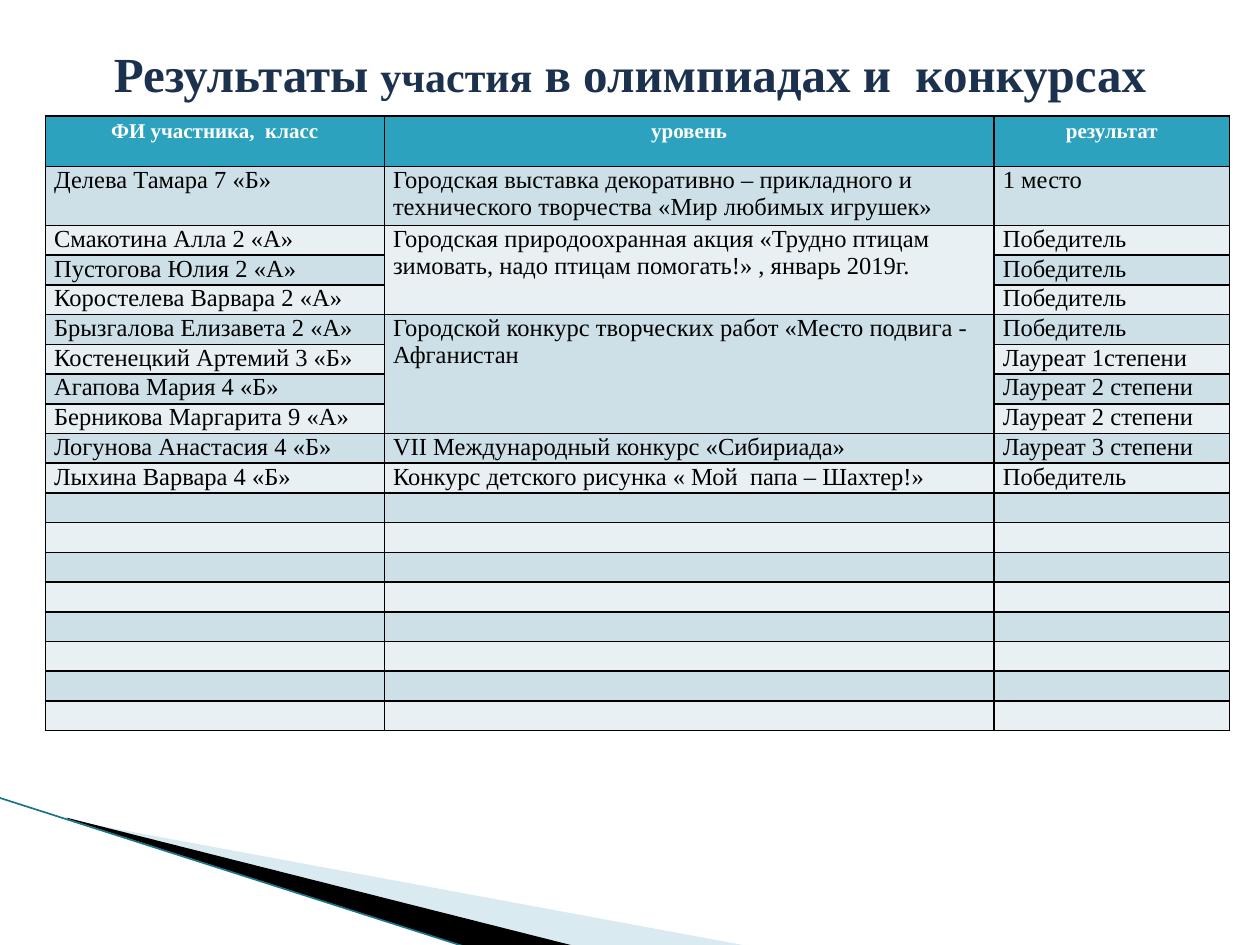
from lxml import etree
from pptx import Presentation
from pptx import util as u
from pptx.dml.color import RGBColor
from pptx.enum import shapes, text
from pptx.oxml import ns

Inches = u.Inches
FONT = "Times New Roman"
COLORS = {
    "title": "1C314E", "header": "2DA2BF", "odd": "CDE0E8", "even": "E8F0F4",
    "white": "FFFFFF", "black": "000000", "pale": "A0CBDC", "edge": "1B7587",
}
HEADINGS = ("ФИ участника,  класс", "уровень", "результат")
RESULTS = [
    ("Делева Тамара 7 «Б»",
     "Городская выставка декоративно – прикладного и технического творчества "
     "«Мир любимых игрушек»", "1 место"),
    ("Смакотина Алла 2 «А»",
     "Городская природоохранная акция «Трудно птицам зимовать, надо птицам "
     "помогать!» , январь 2019г.", "Победитель"),
    ("Пустогова Юлия 2 «А»", "", "Победитель"),
    ("Коростелева Варвара 2 «А»", "", "Победитель"),
    ("Брызгалова Елизавета 2 «А»",
     "Городской конкурс творческих работ «Место подвига - Афганистан", "Победитель"),
    ("Костенецкий Артемий 3 «Б»", "", "Лауреат 1степени"),
    ("Агапова Мария 4 «Б»", "", "Лауреат 2 степени"),
    ("Берникова Маргарита 9 «А»", "", "Лауреат 2 степени"),
    ("Логунова Анастасия 4 «Б»", "VII Международный конкурс «Сибириада»",
     "Лауреат 3 степени"),
    ("Лыхина Варвара 4 «Б»", "Конкурс детского рисунка « Мой  папа – Шахтер!»",
     "Победитель"),
]
EMPTY_ROWS = 8
SHARED_EVENTS = [(2, 4), (5, 8)]  # first and last row of each merged event


def rgb(name):
    return RGBColor.from_string(COLORS[name])


def add_span(para, words, size=14, color="black", bold=False):
    span = para.add_run()
    span.text = words
    span.font.name = FONT
    span.font.size = u.Pt(size)
    span.font.bold = bold
    span.font.color.rgb = rgb(color)


def set_frame(wedge, left, top, width, height):
    """Give the wedge a frame of its own, leaving its outline in place."""
    shift_x, shift_y = wedge.left - Inches(left), wedge.top - Inches(top)
    wedge.left, wedge.top = Inches(left), Inches(top)
    wedge.width, wedge.height = Inches(width), Inches(height)
    outline = wedge._element.find(".//" + ns.qn("a:path"))
    outline.set("w", str(Inches(width)))
    outline.set("h", str(Inches(height)))
    for point in outline.iter(ns.qn("a:pt")):
        point.set("x", str(int(point.get("x")) + shift_x))
        point.set("y", str(int(point.get("y")) + shift_y))


def add_wedge(page, frame, points, color, alpha=None):
    start, *rest = [(Inches(x), Inches(y)) for x, y in points]
    builder = page.shapes.build_freeform(*start)
    builder.add_line_segments(rest, close=True)
    wedge = builder.convert_to_shape()
    set_frame(wedge, *frame)
    wedge.shadow.inherit = False
    wedge.fill.solid()
    wedge.fill.fore_color.rgb = rgb(color)
    wedge.line.fill.background()
    if alpha is not None:
        fill_color = wedge._element.spPr.find(".//" + ns.qn("a:srgbClr"))
        etree.SubElement(fill_color, ns.qn("a:alpha"), val=str(alpha * 1000))


def add_corner(page, left, top, width, height):
    """Wedges and edge line in the lower left corner."""
    add_wedge(page, (0.78, 5.47, 4.16, 1.58),
              [(0.55, 6.51), (5.95, 7.51), (4.56, 7.51), (0.55, 6.5)],
              "pale", alpha=40)
    add_wedge(page, (-0.06, 6.33, 4.16, 0.92),
              [(0.53, 6.49), (4.57, 7.51), (3.72, 7.52), (0.54, 6.5)], "black")
    edge = page.shapes.add_connector(
        shapes.MSO_CONNECTOR.STRAIGHT, Inches(left), Inches(top),
        Inches(left + width), Inches(top + height))
    edge.line.color.rgb = rgb("edge")
    edge.line.width = u.Pt(0.95)
    etree.SubElement(edge._element.spPr, ns.qn("a:effectLst"))


def add_title(page, left, top, width, height):
    title = page.shapes.title
    title.left, title.top = Inches(left), Inches(top)
    title.width, title.height = Inches(width), Inches(height)
    frame = title.text_frame
    frame.word_wrap = True
    frame.auto_size = text.MSO_AUTO_SIZE.SHAPE_TO_FIT_TEXT
    frame.vertical_anchor = text.MSO_ANCHOR.MIDDLE
    para = frame.paragraphs[0]
    para.alignment = text.PP_ALIGN.CENTER
    for words, size in [("Результаты ", 28), ("участия", 24),
                        (" в олимпиадах и  конкурсах", 28)]:
        add_span(para, words, size=size, color="title", bold=True)


def format_cell(cell, fill):
    cell.margin_left = cell.margin_right = Inches(0.07)
    cell.margin_top = cell.margin_bottom = 0
    properties = cell._tc.get_or_add_tcPr()
    for side in ("lnL", "lnR", "lnT", "lnB"):
        border = etree.SubElement(properties, ns.qn("a:" + side), w=str(u.Pt(1)))
        paint = etree.SubElement(border, ns.qn("a:solidFill"))
        etree.SubElement(paint, ns.qn("a:srgbClr"), val=COLORS["black"])
    cell.fill.solid()
    cell.fill.fore_color.rgb = rgb(fill)


def add_results(page, left, top, height, widths, top_heights):
    rows = [HEADINGS, *RESULTS] + [("", "", "")] * EMPTY_ROWS
    low_count = len(rows) - len(top_heights)
    low_height = (height - sum(top_heights)) / low_count
    heights = top_heights + [low_height] * low_count
    table = page.shapes.add_table(
        len(rows), len(widths), Inches(left), Inches(top),
        Inches(sum(widths)), Inches(height)).table
    for column, width in zip(table.columns, widths):
        column.width = Inches(width)
    for number, (row, row_height, values) in enumerate(zip(table.rows, heights, rows)):
        row.height = Inches(row_height)
        fill = "header" if number == 0 else "odd" if number % 2 else "even"
        for cell, words in zip(row.cells, values):
            format_cell(cell, fill)
            para = cell.text_frame.paragraphs[0]
            if number == 0:
                para.alignment = text.PP_ALIGN.CENTER
                para.line_spacing = 1.15
                add_span(para, words, size=12, color="white", bold=True)
            elif words:
                add_span(para, words)
            else:
                # Keeps the empty row as low as a row of text
                etree.SubElement(para._p, ns.qn("a:endParaRPr"), sz="1400")
    for first, last in SHARED_EVENTS:
        table.cell(first, 1).merge(table.cell(last, 1))


def main():
    deck = Presentation()
    deck.slide_width, deck.slide_height = Inches(10), Inches(7.5)
    page = deck.slides.add_slide(deck.slide_layouts[5])
    add_corner(page, -0.01, 6.33, 3.72, 1.19)
    add_title(page, 0.2, 0.29, 9.6, 0.57)
    add_results(page, 0.36, 0.92, 4.88, widths=[2.69, 4.84, 1.87],
                top_heights=[0.4, 0.47])
    deck.save("out.pptx")


if __name__ == "__main__":
    main()
